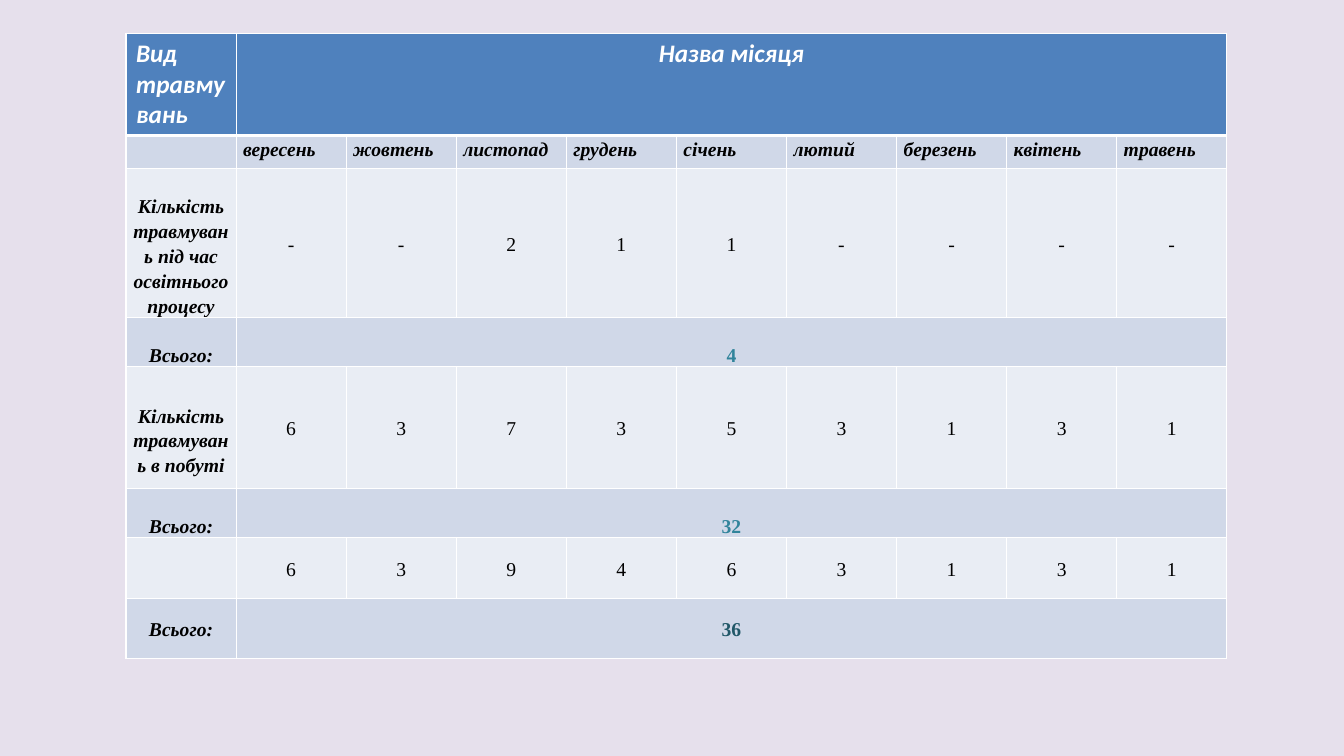
from lxml.etree import SubElement
from pptx import Presentation
from pptx.dml.color import RGBColor
from pptx.enum.text import MSO_ANCHOR, PP_ALIGN
from pptx.oxml.ns import qn
from pptx.util import Inches, Pt

LAVENDER = RGBColor(0xE6, 0xE0, 0xEC)
BLUE = RGBColor(0x4F, 0x81, 0xBD)
BAND_DARK = RGBColor(0xD0, 0xD8, 0xE8)
BAND_LIGHT = RGBColor(0xE9, 0xED, 0xF4)
TEAL = RGBColor(0x31, 0x84, 0x9B)
DEEP_TEAL = RGBColor(0x21, 0x58, 0x68)
WHITE = RGBColor(0xFF, 0xFF, 0xFF)
BLACK = RGBColor(0, 0, 0)

MONTHS = ["вересень", "жовтень", "листопад", "грудень", "січень",
          "лютий", "березень", "квітень", "травень"]
ROWS = [
    ["Вид травмувань", "Назва місяця"],
    ["", *MONTHS],
    ["Кількість\nтравмувань під час освітнього процесу", *"--211----"],
    ["Всього:", "4"],
    ["Кількість\nтравмувань в побуті", *"637353131"],
    ["Всього:", "32"],
    ["", *"639463131"],
    ["Всього:", "36"],
]
ROW_HEIGHTS = [1, 0.33, 1.45, 0.48, 1.21, 0.47, 0.6, 0.6]
TOTAL_COLORS = {3: TEAL, 5: TEAL, 7: DEEP_TEAL}
MONTH_ROW = 1
LOWERED_TOTALS = (3, 5)
LOWERED_LABELS = (2, 3, 4, 5)

HEADER_FONT = {"name": "Calibri", "size": Pt(18), "bold": True, "italic": True}
LABEL_FONT = {"name": "Times New Roman", "size": Pt(14), "bold": True, "italic": True}
TOTAL_FONT = {**LABEL_FONT, "italic": False}
VALUE_FONT = {**TOTAL_FONT, "bold": False}


def apply_format(target, values):
    for name, value in values.items():
        setattr(target, name, value)


def add_borders(cell, bottom_width):
    properties = cell._tc.get_or_add_tcPr()
    for side, width in (("L", 1), ("R", 1), ("T", 1), ("B", bottom_width)):
        line = SubElement(properties, qn(f"a:ln{side}"), w=str(Pt(width)))
        fill = SubElement(line, qn("a:solidFill"))
        SubElement(fill, qn("a:srgbClr"), val=str(WHITE))


def write_cell(cell, text, font, color, paragraph_format):
    cell.text = text
    for paragraph in cell.text_frame.paragraphs:
        apply_format(paragraph, paragraph_format)
        for run in paragraph.runs:
            apply_format(run.font, font)
            run.font.color.rgb = color


def fill_header_cell(cell, text, column):
    alignment = PP_ALIGN.CENTER if column else PP_ALIGN.LEFT
    write_cell(cell, text, HEADER_FONT, WHITE, {"alignment": alignment})


def fill_body_cell(cell, text, row, column):
    lowered = row in LOWERED_TOTALS or (column == 0 and row in LOWERED_LABELS)
    top_anchored = row == MONTH_ROW or row in LOWERED_TOTALS
    apply_format(cell, {
        "margin_left": Inches(0.07),
        "margin_right": Inches(0.07),
        "margin_top": Inches(0.24 if lowered else 0),
        "margin_bottom": 0,
        "vertical_anchor": MSO_ANCHOR.TOP if top_anchored else MSO_ANCHOR.MIDDLE,
    })
    if column == 0 or row == MONTH_ROW:
        font, color = LABEL_FONT, BLACK
    elif row in TOTAL_COLORS:
        font, color = TOTAL_FONT, TOTAL_COLORS[row]
    else:
        font, color = VALUE_FONT, BLACK
    alignment = PP_ALIGN.JUSTIFY if row == MONTH_ROW else PP_ALIGN.CENTER
    write_cell(cell, text, font, color, {"alignment": alignment, "line_spacing": 1.15})


def add_injury_table(slide, left, top, width):
    column_count = len(MONTHS) + 1
    shape = slide.shapes.add_table(len(ROWS), column_count, left, top, width,
                                   Inches(sum(ROW_HEIGHTS)))
    table = shape.table
    for column in table.columns:
        column.width = int(width / column_count)
    for row, (texts, height) in enumerate(zip(ROWS, ROW_HEIGHTS)):
        table.rows[row].height = Inches(height)
        row_color = BLUE if row == 0 else BAND_DARK if row % 2 else BAND_LIGHT
        for cell in table.rows[row].cells:
            add_borders(cell, 1 if row else 3)
            cell.fill.solid()
            cell.fill.fore_color.rgb = row_color
        if len(texts) == 2:
            table.cell(row, 1).merge(table.cell(row, column_count - 1))
        for column, text in enumerate(texts):
            cell = table.cell(row, column)
            if row == 0:
                fill_header_cell(cell, text, column)
            else:
                fill_body_cell(cell, text, row, column)


def main():
    presentation = Presentation()
    presentation.slide_width = Inches(13.33)
    presentation.slide_height = Inches(7.5)
    slide = presentation.slides.add_slide(presentation.slide_layouts[6])
    slide.background.fill.solid()
    slide.background.fill.fore_color.rgb = LAVENDER
    add_injury_table(slide, Inches(1.25), Inches(0.33), Inches(10.92))
    presentation.save("out.pptx")


if __name__ == "__main__":
    main()
